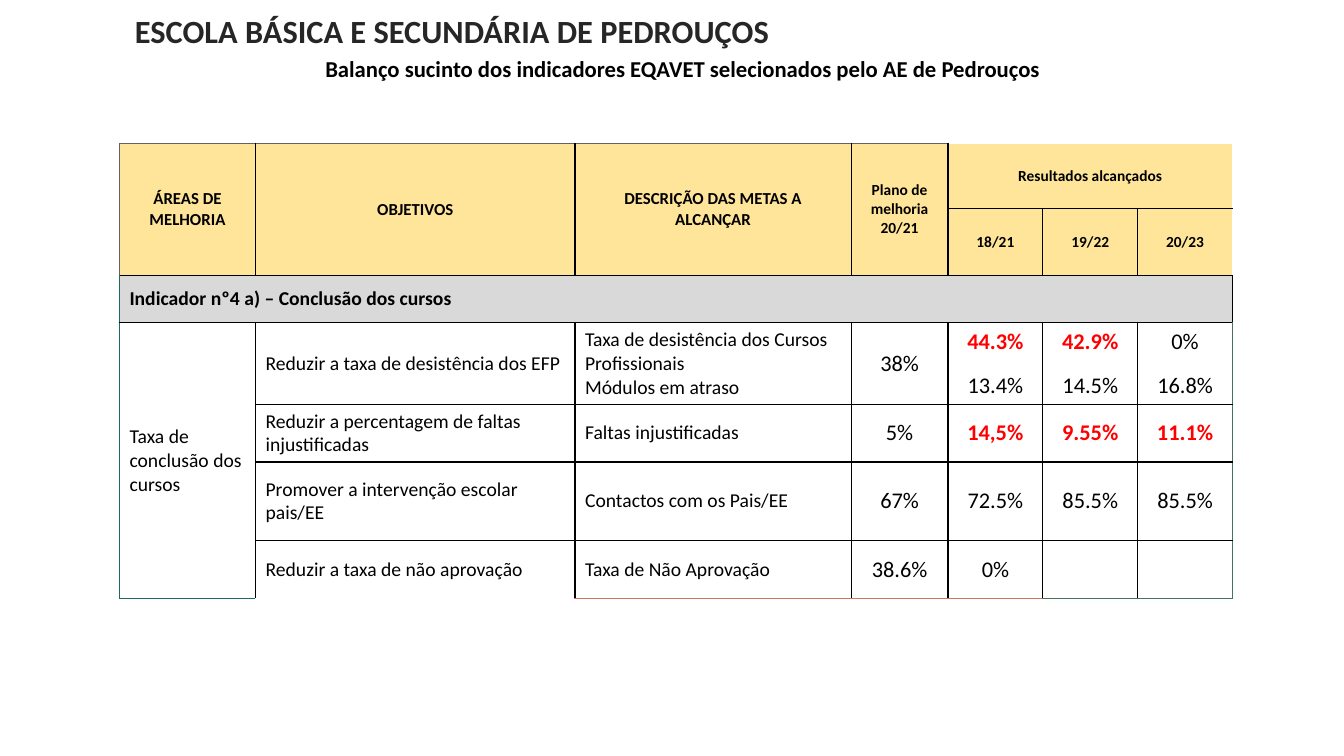
import pptx
import pptx.dml.color
import pptx.enum.text
import pptx.oxml
import pptx.oxml.ns
import pptx.util
from lxml import etree

Cm = pptx.util.Cm
Pt = pptx.util.Pt
CENTER = pptx.enum.text.PP_ALIGN.CENTER
LEFT = pptx.enum.text.PP_ALIGN.LEFT
MIDDLE = pptx.enum.text.MSO_ANCHOR.MIDDLE

COLORS = {
    "black": "000000", "heading": "262626", "white": "FFFFFF", "red": "FF0000",
    "header": "FFE599", "band": "D9D9D9", "olive": "68605E",
    "teal": "20695E", "coral": "D8715E", "slate": "48715E",
}

COLUMN_WIDTHS = [3.43, 8.05, 6.96, 2.44, 2.39, 2.39, 2.39]
ROW_HEIGHTS = [1.65, 1.68, 1.19, 2.06, 1.45, 1.98, 1.47]
MERGES = [
    (0, 0, 1, 0), (0, 1, 1, 1), (0, 2, 1, 2), (0, 3, 1, 3),
    (0, 4, 0, 6), (2, 0, 2, 6), (3, 0, 6, 0),
]
HEADINGS = [
    ["ÁREAS DE MELHORIA", "OBJETIVOS", "DESCRIÇÃO DAS METAS A ALCANÇAR",
     "Plano de melhoria 20/21", "Resultados alcançados"],
    ["", "", "", "", "18/21", "19/22", "20/23"],
]
INDICATOR = "Indicador nº4 a) – Conclusão dos cursos"
AREA = "Taxa de conclusão dos cursos"
GOALS = [
    ["Reduzir a taxa de desistência dos EFP",
     "Taxa de desistência dos Cursos Profissionais\nMódulos em atraso",
     "38%", "44.3%\n13.4%", "42.9%\n14.5%", "0%\n16.8%"],
    ["Reduzir a percentagem de faltas injustificadas", "Faltas injustificadas",
     "5%", "14,5%", "9.55%", "11.1%"],
    ["Promover a intervenção escolar pais/EE", "Contactos com os Pais/EE",
     "67%", "72.5%", "85.5%", "85.5%"],
    ["Reduzir a taxa de não aprovação", "Taxa de Não Aprovação",
     "38.6%", "0%", "", ""],
]
MISSED = {"44.3%", "42.9%", "14,5%", "9.55%", "11.1%"}
BOTTOM_EDGE = ["teal", "white", "coral", "coral", "coral", "slate", "slate"]


class Report:
    """Holds the deck style and the current slide, and draws its elements."""

    font = "Calibri"

    def __init__(self):
        self.deck = pptx.Presentation()
        self.deck.slide_width = Cm(33.87)
        self.deck.slide_height = Cm(19.05)
        self.slide = self.deck.slides.add_slide(self.deck.slide_layouts[6])

    def set_text(self, frame, text, size, color="black", bold=False, align=LEFT, gap=0):
        frame.text = text
        frame.word_wrap = True
        for position, paragraph in enumerate(frame.paragraphs):
            paragraph.alignment = align
            if position and gap:
                paragraph.space_before = Pt(gap)
            missed = paragraph.text in MISSED
            for run in paragraph.runs:
                run.font.name = self.font
                run.font.size = Pt(size)
                run.font.bold = bold or missed
                shade = COLORS["red" if missed else color]
                run.font.color.rgb = pptx.dml.color.RGBColor.from_string(shade)

    def text(self, box, text, size, color, align):
        frame = self.slide.shapes.add_textbox(*map(Cm, box)).text_frame
        frame.vertical_anchor = MIDDLE
        self.set_text(frame, text, size, color, True, align)

    def table(self, left, top):
        shape = self.slide.shapes.add_table(
            len(ROW_HEIGHTS), len(COLUMN_WIDTHS), Cm(left), Cm(top),
            Cm(sum(COLUMN_WIDTHS)), Cm(sum(ROW_HEIGHTS)))
        grid = shape.table
        grid.first_row = grid.horz_banding = False
        for column, width in zip(grid.columns, COLUMN_WIDTHS):
            column.width = Cm(width)
        for row, height in zip(grid.rows, ROW_HEIGHTS):
            row.height = Cm(height)
        for first_row, first_col, last_row, last_col in MERGES:
            grid.cell(first_row, first_col).merge(grid.cell(last_row, last_col))
        return grid

    def cell(self, cell, text, size, fill=None, bold=False, align=LEFT, gap=0):
        cell.vertical_anchor = MIDDLE
        self.set_text(cell.text_frame, text, size, "black", bold, align, gap)
        if fill:
            cell.fill.solid()
            cell.fill.fore_color.rgb = pptx.dml.color.RGBColor.from_string(COLORS[fill])
        else:
            cell.fill.background()

    def borders(self, cell, edges):
        properties = cell._tc.get_or_add_tcPr()
        for side in "LRTB":
            color = edges.get(side, "black")
            width = Pt(1 if color == "black" else 0.6)
            line = etree.SubElement(
                properties, pptx.oxml.ns.qn(f"a:ln{side}"), w=str(int(width)))
            solid = etree.SubElement(line, pptx.oxml.ns.qn("a:solidFill"))
            etree.SubElement(solid, pptx.oxml.ns.qn("a:srgbClr"), val=COLORS[color])


def outer_edges(cell, row, column):
    edges = {}
    if column == 0:
        edges["L"] = "olive" if row < 2 else "teal"
    width = cell.span_width if cell.is_merge_origin else 1
    height = cell.span_height if cell.is_merge_origin else 1
    if column + width == len(COLUMN_WIDTHS) and row != 2:
        edges["R"] = "white" if row < 2 else "slate"
    if row == 0:
        edges["T"] = "white" if column == 4 else "olive"
    if row + height == len(ROW_HEIGHTS):
        edges["B"] = BOTTOM_EDGE[column]
    return edges


def main():
    report = Report()
    report.text((3.15, 0.13, 21.16, 1.3), "ESCOLA BÁSICA E SECUNDÁRIA DE PEDROUÇOS",
                23.1, "heading", LEFT)
    report.text((4.8, 1.15, 24.8, 1.15),
                "Balanço sucinto dos indicadores EQAVET selecionados pelo AE de Pedrouços",
                16.2, "black", CENTER)

    grid = report.table(3.01, 3.61)
    for row in range(len(ROW_HEIGHTS)):
        for column in range(len(COLUMN_WIDTHS)):
            cell = grid.cell(row, column)
            if not cell.is_spanned:
                report.borders(cell, outer_edges(cell, row, column))

    for row, headings in enumerate(HEADINGS):
        for column, heading in enumerate(headings):
            if heading:
                report.cell(grid.cell(row, column), heading, 12 if column < 3 else 11,
                            "header", True, CENTER)
    report.cell(grid.cell(2, 0), INDICATOR, 14, "band", True)
    report.cell(grid.cell(3, 0), AREA, 14)
    for row, goal in enumerate(GOALS, 3):
        for column, entry in enumerate(goal, 1):
            if column < 3:
                report.cell(grid.cell(row, column), entry, 14)
            else:
                report.cell(grid.cell(row, column), entry, 16, align=CENTER, gap=12)
    report.deck.save("out.pptx")


if __name__ == "__main__":
    main()
